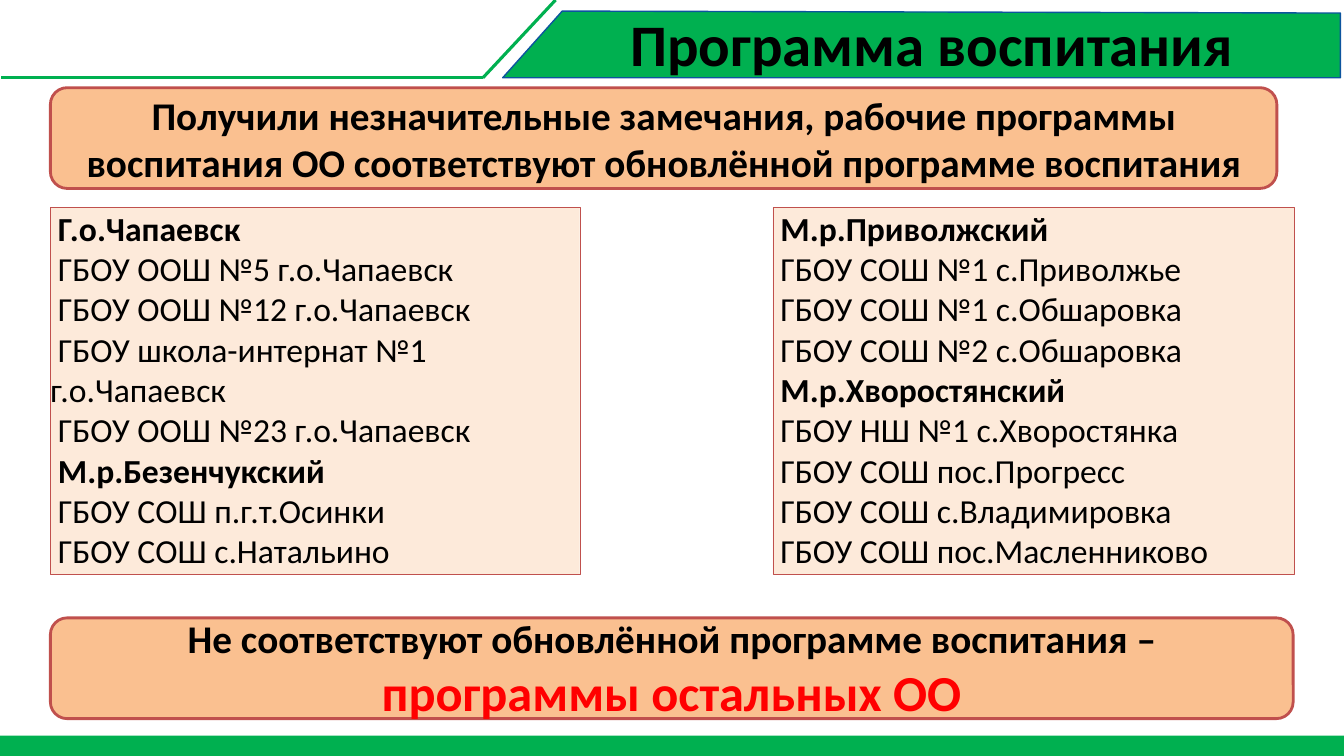
from dataclasses import dataclass

from lxml.etree import SubElement
from pptx import Presentation
from pptx.dml.color import RGBColor
from pptx.enum.shapes import MSO_CONNECTOR as Connector, MSO_SHAPE as Preset
from pptx.enum.text import MSO_ANCHOR as Anchor, MSO_AUTO_SIZE as AutoSize, PP_ALIGN as Align
from pptx.oxml.ns import qn
from pptx.util import Cm, Pt


@dataclass(frozen=True)
class Theme:
    font: str = "Calibri"
    green: str = "00B050"
    blue: str = "0C549E"
    rust: str = "C0504D"
    peach: str = "FAC090"
    pale: str = "FDEADA"
    black: str = "000000"
    red: str = "FF0000"
    title: int = 42
    accent: int = 36
    band: int = 28
    body: int = 24


@dataclass(frozen=True)
class Box:
    """Left, top, width and height in centimetres."""
    x: float
    y: float
    w: float
    h: float

    @property
    def lengths(self):
        return Cm(self.x), Cm(self.y), Cm(self.w), Cm(self.h)


THEME = Theme()
WIDTH, HEIGHT = 33.87, 19.05

CHAPAEVSK = [
    ("Г.о.Чапаевск", ["ГБОУ ООШ №5 г.о.Чапаевск", "ГБОУ ООШ №12 г.о.Чапаевск",
                      "ГБОУ школа-интернат №1 г.о.Чапаевск", "ГБОУ ООШ №23 г.о.Чапаевск"]),
    ("М.р.Безенчукский", ["ГБОУ СОШ п.г.т.Осинки", "ГБОУ СОШ с.Натальино"]),
]
PRIVOLZHSKY = [
    ("М.р.Приволжский", ["ГБОУ СОШ №1 с.Приволжье", "ГБОУ СОШ №1 с.Обшаровка",
                         "ГБОУ СОШ №2 с.Обшаровка"]),
    ("М.р.Хворостянский", ["ГБОУ НШ №1 с.Хворостянка", "ГБОУ СОШ пос.Прогресс",
                           "ГБОУ СОШ с.Владимировка", "ГБОУ СОШ пос.Масленниково"]),
]


def paint(shape, fill=None, line=None, width=1):
    """Give a shape its fill and outline, without a shadow."""
    if fill:
        shape.fill.solid()
        shape.fill.fore_color.rgb = RGBColor.from_string(fill)
    if line:
        shape.line.color.rgb = RGBColor.from_string(line)
        shape.line.width = Pt(width)
    else:
        shape.line.fill.background()
    if hasattr(shape, "shadow"):
        shape.shadow.inherit = False


def place(shape, box):
    shape.left, shape.top, shape.width, shape.height = box.lengths


def prepare(shape, anchor, inset=None):
    """Set up a shape's text frame."""
    frame = shape.text_frame
    frame.word_wrap = True
    frame.auto_size = AutoSize.NONE
    frame.vertical_anchor = anchor
    if inset is not None:
        frame.margin_left = frame.margin_right = Cm(inset)
        frame.margin_top = frame.margin_bottom = Cm(inset)
    return frame


def write(frame, text, size, color=THEME.black, bold=True, align=Align.LEFT, indent=0):
    """Add one paragraph, using the empty first one when it is free."""
    first = frame.paragraphs[0]
    para = frame.add_paragraph() if first.runs else first
    para.alignment = align
    para.space_before = Pt(0)
    if indent:
        para._p.get_or_add_pPr().set("indent", str(Cm(indent)))
    span = para.add_run()
    span.text = text
    span.font.name = THEME.font
    span.font.size = Pt(size)
    span.font.bold = bold
    span.font.color.rgb = RGBColor.from_string(color)


def add_line(page, start, end):
    line = page.shapes.add_connector(Connector.STRAIGHT, *map(Cm, start + end))
    line.line.color.rgb = RGBColor.from_string(THEME.green)
    line.line.width = Pt(2.25)
    SubElement(line._element.spPr, qn("a:effectLst"))


def add_header(page, box):
    """Slanted banner with the title, and the green rule to its left."""
    right, bottom, slant = box.x + box.w, box.y + box.h, 1.5
    corners = [(right, box.y + 0.05), (right, bottom), (box.x, bottom)]
    builder = page.shapes.build_freeform(Cm(box.x + slant), Cm(box.y))
    builder.add_line_segments([(Cm(x), Cm(y)) for x, y in corners], close=True)
    paint(builder.convert_to_shape(), THEME.green, THEME.blue)

    bend = (box.x - 0.5, bottom)
    add_line(page, (box.x + 1.33, 0), bend)
    add_line(page, bend, (0.03, bottom))

    title = page.shapes.title
    place(title, Box(box.x + 3.21, box.y - 0.08, 15.34, 1.8))
    write(prepare(title, Anchor.TOP, inset=0), "Программа воспитания", THEME.title)
    title.element.getparent().append(title.element)  # bring in front of the banner


def add_footer(page, box):
    paint(page.shapes.add_shape(Preset.RECTANGLE, *box.lengths), THEME.green)


def add_schools(shape, box, districts):
    """List of districts, each followed by its schools."""
    place(shape, box)
    paint(shape, THEME.pale, THEME.rust, 0.25)
    frame = prepare(shape, Anchor.TOP, inset=0)
    for district, schools in districts:
        write(frame, district, THEME.body, indent=0.19)
        for school in schools:
            write(frame, school, THEME.body, bold=False, indent=0.19)


def add_band(page, box, lines):
    """Rounded band with centred statements."""
    band = page.shapes.add_shape(Preset.ROUNDED_RECTANGLE, *box.lengths)
    paint(band, THEME.peach, THEME.rust, 2)
    frame = prepare(band, Anchor.MIDDLE)
    for text, size, color in lines:
        write(frame, text, size, color, align=Align.CENTER)


def main():
    deck = Presentation()
    deck.slide_width, deck.slide_height = Cm(WIDTH), Cm(HEIGHT)
    page = deck.slides.add_slide(deck.slide_layouts[0])

    # Frame of the page
    add_header(page, Box(12.67, 0.28, 21.11, 1.68))
    add_footer(page, Box(0, HEIGHT - 0.51, WIDTH, 0.51))

    # School lists
    add_schools(page.placeholders[1], Box(1.27, 5.23, 13.34, 9.25), CHAPAEVSK)
    right_box = Box(19.48, 5.23, 13.13, 9.25)
    right_list = page.shapes.add_shape(Preset.RECTANGLE, *right_box.lengths)
    add_schools(right_list, right_box, PRIVOLZHSKY)

    # Statements above and below the lists
    add_band(page, Box(1.27, 2.21, 30.91, 2.54), [
        ("Получили незначительные замечания, рабочие программы воспитания ОО "
         "соответствуют обновлённой программе воспитания", THEME.band, THEME.black)])
    add_band(page, Box(1.27, 15.57, 31.32, 2.54), [
        ("Не соответствуют обновлённой программе воспитания –", THEME.band, THEME.black),
        ("программы остальных ОО", THEME.accent, THEME.red)])

    deck.save("out.pptx")


if __name__ == "__main__":
    main()
